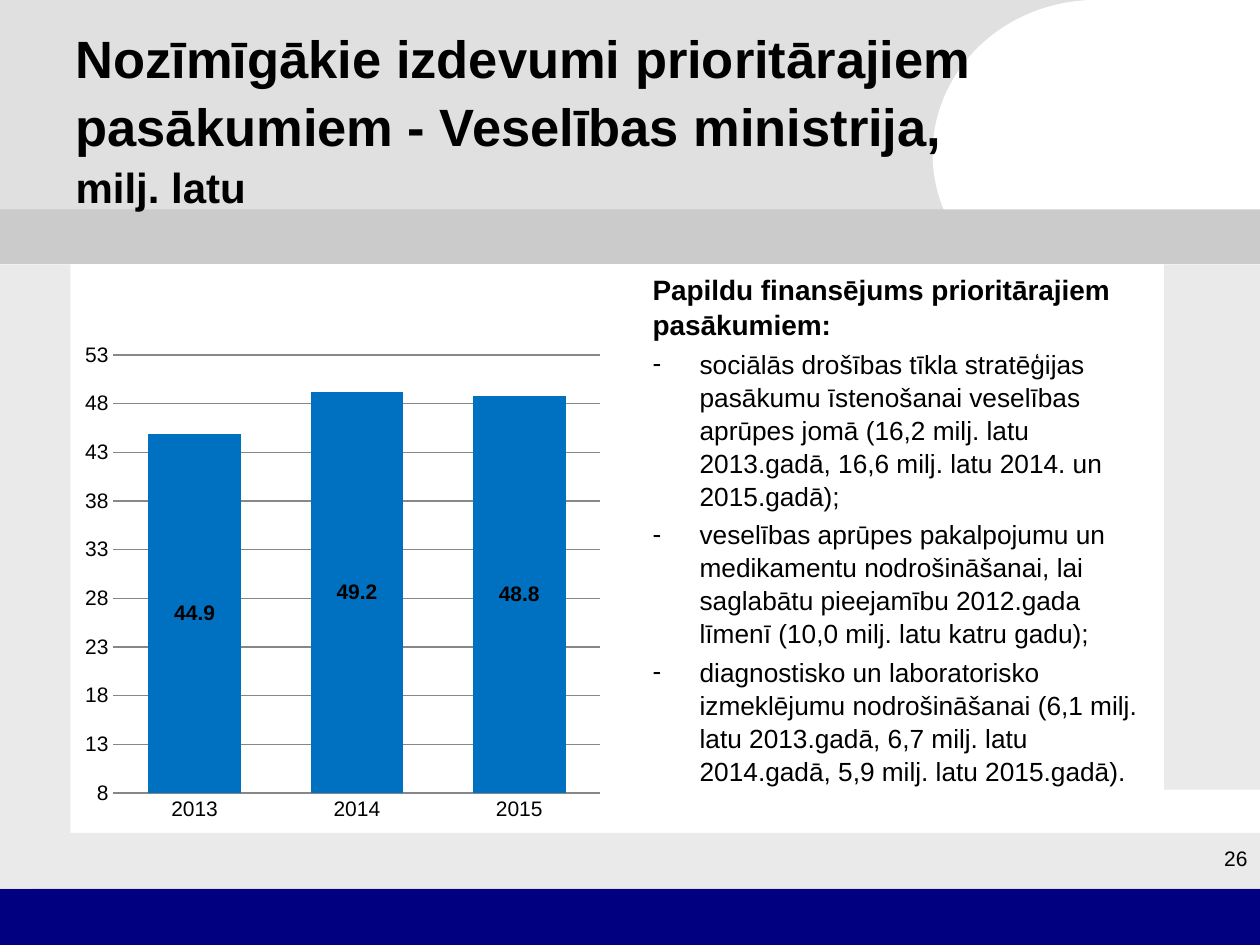
"""Build the slide on priority spending of the health ministry."""
from lxml.etree import SubElement
from pptx import Presentation
from pptx.chart.data import CategoryChartData
from pptx.dml.color import RGBColor
from pptx.enum.chart import XL_CHART_TYPE, XL_LABEL_POSITION, XL_TICK_MARK
from pptx.enum.shapes import MSO_SHAPE
from pptx.enum.text import MSO_ANCHOR, MSO_AUTO_SIZE, PP_ALIGN
from pptx.oxml.ns import qn
from pptx.util import Cm, Pt

BLACK = RGBColor(0x00, 0x00, 0x00)
WHITE = RGBColor(0xFF, 0xFF, 0xFF)
HEADER_GRAY = RGBColor(0xE0, 0xE0, 0xE0)
BAND_GRAY = RGBColor(0xCB, 0xCB, 0xCB)
FRAME_GRAY = RGBColor(0xEA, 0xEA, 0xEA)
GRID_GRAY = RGBColor(0x87, 0x87, 0x87)
NAVY = RGBColor(0x00, 0x00, 0x80)
BLUE = RGBColor(0x00, 0x70, 0xC0)


def style(font, size, bold=False):
    font.name = "Arial"
    font.size = Pt(size)
    font.bold = bold
    font.color.rgb = BLACK


def place(shape, left, top, width, height):
    shape.left, shape.top = Cm(left), Cm(top)
    shape.width, shape.height = Cm(width), Cm(height)


presentation = Presentation()
presentation.slide_width, presentation.slide_height = Cm(25.4), Cm(19.05)
slide = presentation.slides.add_slide(presentation.slide_layouts[1])
shapes = slide.shapes
heading, funding = slide.placeholders

backdrop = [
    (MSO_SHAPE.RECTANGLE, 0, 0, 23.09, 4.29, HEADER_GRAY),
    (MSO_SHAPE.OVAL, 18.8, 0, 6.6, 6.2, WHITE),
    (MSO_SHAPE.RECTANGLE, 0, 5.33, 1.42, 12.57, FRAME_GRAY),
    (MSO_SHAPE.RECTANGLE, 0.66, 16.79, 24.74, 1.12, FRAME_GRAY),
    (MSO_SHAPE.RECTANGLE, 0, 17.92, 25.4, 1.13, NAVY),
    (MSO_SHAPE.RECTANGLE, 23.47, 5.33, 1.93, 10.59, FRAME_GRAY),
    (MSO_SHAPE.RECTANGLE, 21.89, 0, 3.51, 5.13, WHITE),
    (MSO_SHAPE.RECTANGLE, 0, 4.22, 25.4, 1.1, BAND_GRAY),
]
for preset, left, top, width, height, color in backdrop:
    panel = shapes.add_shape(preset, Cm(left), Cm(top), Cm(width), Cm(height))
    panel.fill.solid()
    panel.fill.fore_color.rgb = color
    panel.line.fill.background()
    panel.shadow.inherit = False

for placeholder in (heading, funding):
    shapes.element.append(placeholder.element)
    placeholder.text_frame.auto_size = MSO_AUTO_SIZE.NONE
    placeholder.text_frame.word_wrap = True

place(heading, 1.27, 0.76, 22.86, 3.18)
heading.text_frame.vertical_anchor = MSO_ANCHOR.MIDDLE
heading_line = heading.text_frame.paragraphs[0]
heading_line.alignment = PP_ALIGN.LEFT
heading_line.line_spacing = 1.08
style(heading_line.font, 32, True)
subject = heading_line.add_run()
subject.text = "Nozīmīgākie izdevumi prioritārajiem pasākumiem - Veselības ministrija,"
style(subject.font, 30, True)
heading_line.add_line_break()
unit = heading_line.add_run()
unit.text = "milj. latu"
style(unit.font, 24, True)

spending = CategoryChartData(number_format="0.0")
spending.categories = ["2013", "2014", "2015"]
spending.add_series("Series 1", (44.9, 49.2, 48.8))
chart = shapes.add_chart(
    XL_CHART_TYPE.COLUMN_CLUSTERED, Cm(1.5), Cm(6.73), Cm(10.82), Cm(10.01), spending
).chart
chart.has_title = False
chart.has_legend = False
style(chart.font, 18)

years, amounts = chart.category_axis, chart.value_axis
for axis in (years, amounts):
    axis.major_tick_mark = XL_TICK_MARK.NONE
    axis.minor_tick_mark = XL_TICK_MARK.NONE
    style(axis.tick_labels.font, 12)
years.format.line.color.rgb = GRID_GRAY
amounts.format.line.fill.background()
amounts.minimum_scale, amounts.maximum_scale = 8, 53
amounts.major_unit = 5
amounts.tick_labels.number_format = "0"
amounts.tick_labels.number_format_is_linked = False
amounts.major_gridlines.format.line.color.rgb = GRID_GRAY

columns = chart.plots[0]
columns.gap_width = 75
columns.overlap = -25
columns.vary_by_categories = False
columns.series[0].format.fill.solid()
columns.series[0].format.fill.fore_color.rgb = BLUE
columns.has_data_labels = True
labels = columns.data_labels
labels.show_value = True
labels.position = XL_LABEL_POSITION.CENTER
labels.number_format = "0.0"
labels.number_format_is_linked = False
style(labels.font, 12, True)

page_box = shapes.add_textbox(Cm(19.66), Cm(16.92), Cm(5.74), Cm(1.27))
page_box.text_frame.word_wrap = True
page_number = page_box.text_frame.paragraphs[0]
page_number.text = "26"
page_number.alignment = PP_ALIGN.RIGHT
style(page_number.font, 12)

place(funding, 12.9, 5.33, 10.59, 11.43)
funding_intro = funding.text_frame.paragraphs[0]
funding_intro.text = "Papildu finansējums prioritārajiem pasākumiem:"
funding_intro.line_spacing = 1.05
funding_intro.space_before = Pt(0)
intro_properties = funding_intro._p.get_or_add_pPr()
intro_properties.set("marL", "0")
intro_properties.set("indent", "0")
SubElement(intro_properties, qn("a:buNone"))
style(funding_intro.font, 16, True)

measures = [
    "sociālās drošības tīkla stratēģijas pasākumu īstenošanai veselības aprūpes jomā "
    "(16,2 milj. latu 2013.gadā, 16,6 milj. latu 2014. un 2015.gadā);",
    "veselības aprūpes pakalpojumu un medikamentu nodrošināšanai, lai saglabātu "
    "pieejamību 2012.gada līmenī (10,0 milj. latu katru gadu);",
    "diagnostisko un laboratorisko izmeklējumu nodrošināšanai (6,1 milj. latu 2013.gadā, "
    "6,7 milj. latu 2014.gadā, 5,9 milj. latu 2015.gadā).",
]
for measure in measures:
    item = funding.text_frame.add_paragraph()
    item.text = measure
    item.line_spacing = 1.05
    item.space_before = Pt(3)
    item_properties = item._p.get_or_add_pPr()
    item_properties.set("marL", str(Cm(0.95)))
    item_properties.set("indent", str(-Cm(0.95)))
    SubElement(item_properties, qn("a:buChar"), char="-")
    style(item.font, 15)

presentation.save("out.pptx")
